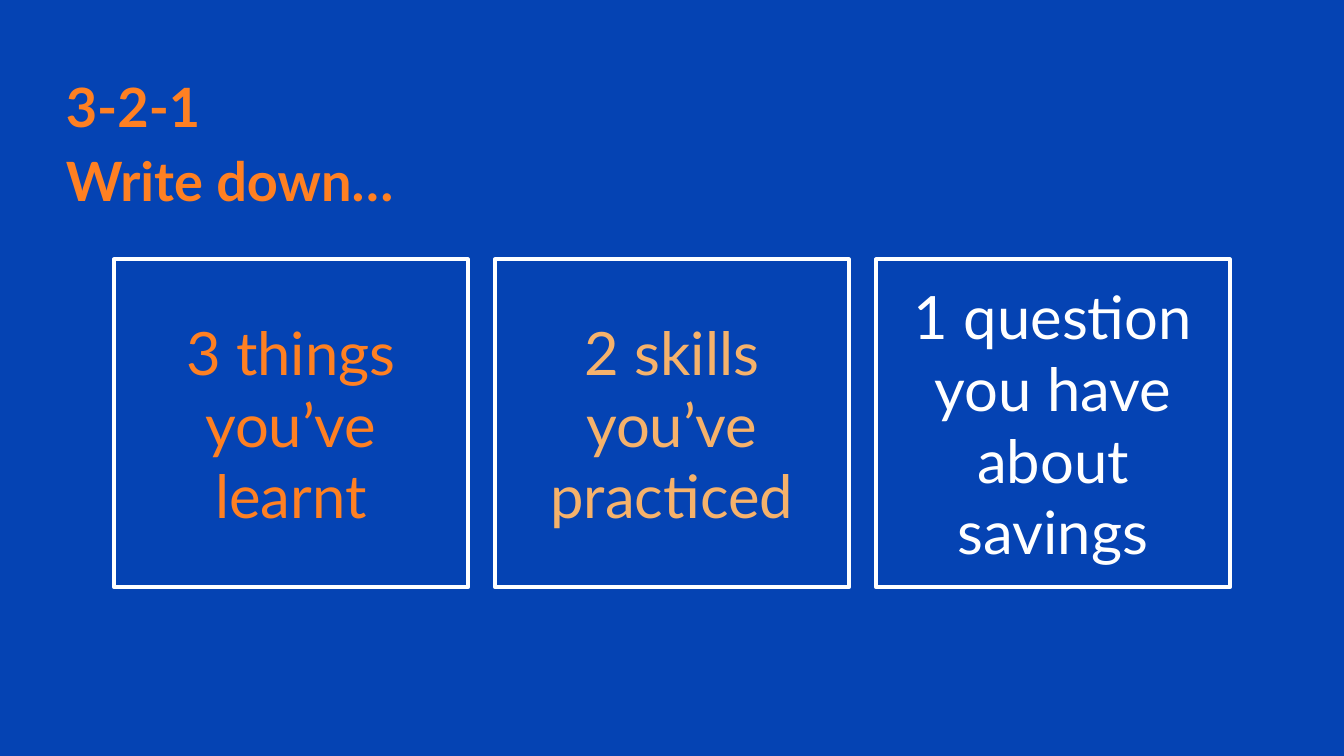
from pptx import Presentation
from pptx.dml.color import RGBColor
from pptx.enum.shapes import MSO_SHAPE
from pptx.enum.text import MSO_ANCHOR, PP_ALIGN
from pptx.util import Inches, Pt

BLUE = RGBColor(0x05, 0x43, 0xB3)
ORANGE = RGBColor(0xFF, 0x80, 0x22)
SAND = RGBColor(0xF6, 0xB2, 0x6B)
WHITE = RGBColor(0xFF, 0xFF, 0xFF)

WIDE = Inches(10)
HIGH = WIDE * 9 // 16
COLS = 100
UNIT = WIDE // COLS

LEFT, TOP = 8.5, 19.3
CARD, TALL = 26.3, 24.4
TASKS = [
    ("3 things you’ve learnt", ORANGE),
    ("2 skills you’ve practiced", SAND),
    ("1 question you have about savings", WHITE),
]
STEP = (COLS - 2 * LEFT - CARD) / (len(TASKS) - 1)


def write(frame, text, font, size=32, color=WHITE, bold=False,
          align=PP_ALIGN.LEFT, anchor=MSO_ANCHOR.TOP, inset=0, space=1):
    frame.word_wrap = True
    frame.vertical_anchor = anchor
    frame.margin_left = frame.margin_right = Inches(inset)
    frame.margin_top = frame.margin_bottom = Inches(inset)
    frame.text = text
    for line in frame.paragraphs:
        line.alignment = align
        line.line_spacing = space
        for run in line.runs:
            run.font.name = font
            run.font.size = Pt(size)
            run.font.bold = bold
            run.font.color.rgb = color


def grid(*cells):
    return [round(cell * UNIT) for cell in cells]


class Deck:
    font = "Lato"
    edge = Pt(2.25)

    def __init__(self):
        self.file = Presentation()
        self.file.slide_width = WIDE
        self.file.slide_height = HIGH
        self.slide = self.file.slides.add_slide(self.file.slide_layouts[6])
        fill = self.slide.background.fill
        fill.solid()
        fill.fore_color.rgb = BLUE

    def title(self, text):
        box = self.slide.shapes.add_textbox(*grid(4.9, 4.7, 78.6, 8.5))
        write(box.text_frame, text, self.font, size=29, color=ORANGE,
              bold=True, space=1.15)

    def card(self, col, text, color):
        box = self.slide.shapes.add_shape(
            MSO_SHAPE.RECTANGLE, *grid(LEFT + col * STEP, TOP, CARD, TALL))
        box.shadow.inherit = False
        box.fill.background()
        box.line.color.rgb = WHITE
        box.line.width = self.edge
        write(box.text_frame, text, self.font, color=color,
              align=PP_ALIGN.CENTER, anchor=MSO_ANCHOR.MIDDLE, inset=0.1)


def main():
    deck = Deck()
    deck.title("3-2-1\nWrite down…")
    for col, (text, color) in enumerate(TASKS):
        deck.card(col, text, color)
    deck.file.save("out.pptx")


if __name__ == "__main__":
    main()
